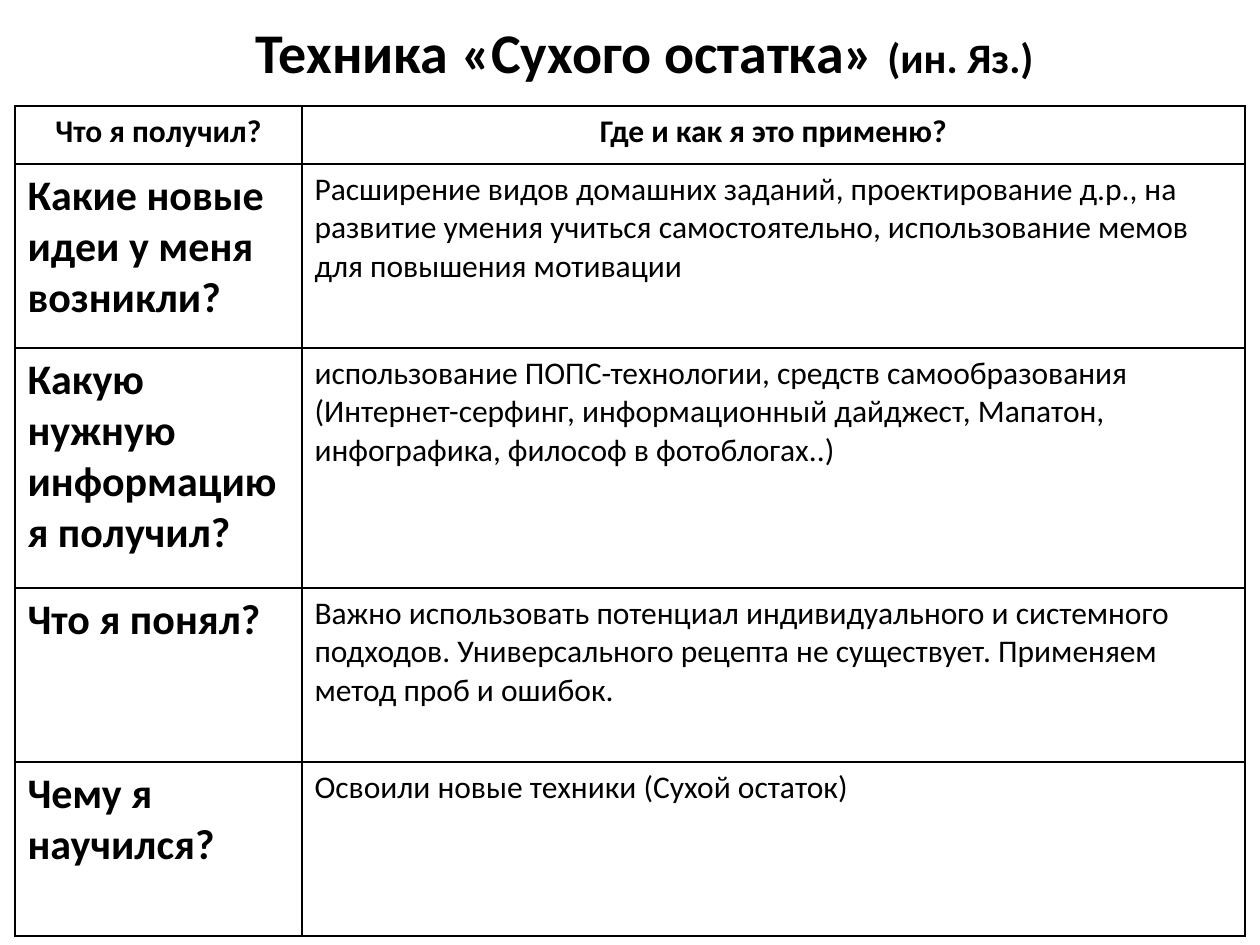
"""Build the "dry residue" reflection slide: a title above a two-column table."""
from lxml.etree import SubElement
from pptx import Presentation
from pptx.dml.color import RGBColor
from pptx.enum.text import MSO_ANCHOR, PP_ALIGN
from pptx.oxml.ns import qn
from pptx.util import Pt

TITLE = [("Техника «Сухого остатка» ", 32), ("(ин. Яз.)", 24)]
HEAD = ("Что я получил?", "Где и как я это применю?")
ROWS = [
    ("Какие новые идеи у меня возникли?",
     "Расширение видов домашних заданий, проектирование д.р., на развитие умения "
     "учиться самостоятельно, использование мемов для повышения мотивации"),
    ("Какую нужную информацию я получил?",
     "использование ПОПС-технологии, средств самообразования (Интернет-серфинг, "
     "информационный дайджест, Мапатон, инфографика, философ в фотоблогах..)"),
    ("Что я понял?",
     "Важно использовать потенциал индивидуального и системного подходов. "
     "Универсального рецепта не существует. Применяем метод проб и ошибок."),
    ("Чему я научился?", "Освоили новые техники (Сухой остаток)"),
]
COLORS = {"text": "000000", "line": "000000", "fill": "FFFFFF"}
FONT = "Calibri"
WIDTHS = (287, 943)
HEIGHTS = (58, 184, 240, 174, 174)
PX = 914400 // 126


def px(*nums):
    return [num * PX for num in nums]


def style(run, size, bold):
    font = run.font
    font.name, font.size, font.bold = FONT, Pt(size), bold
    font.color.rgb = RGBColor.from_string(COLORS["text"])


def border(cell):
    props = cell._tc.get_or_add_tcPr()
    for spot, side in enumerate(("lnL", "lnR", "lnT", "lnB")):
        line = SubElement(props, qn(f"a:{side}"), w=str(Pt(1)))
        fill = SubElement(line, qn("a:solidFill"))
        SubElement(fill, qn("a:srgbClr"), val=COLORS["line"])
        props.insert(spot, line)


def add_title(slide):
    frame = slide.shapes.add_textbox(*px(54, 16, 1181, 70)).text_frame
    frame.word_wrap = True
    frame.vertical_anchor = MSO_ANCHOR.MIDDLE
    para = frame.paragraphs[0]
    para.alignment = PP_ALIGN.CENTER
    for text, size in TITLE:
        run = para.add_run()
        run.text = text
        style(run, size, True)


def add_grid(slide):
    data = [HEAD, *ROWS]
    box = px(15, 106, sum(WIDTHS), sum(HEIGHTS))
    table = slide.shapes.add_table(len(data), len(HEAD), *box).table
    table.horz_banding = False
    for col, width in zip(table.columns, px(*WIDTHS)):
        col.width = width
    for row, height in zip(table.rows, px(*HEIGHTS)):
        row.height = height
    for r, texts in enumerate(data):
        for c, text in enumerate(texts):
            cell = table.cell(r, c)
            cell.fill.solid()
            cell.fill.fore_color.rgb = RGBColor.from_string(COLORS["fill"])
            border(cell)
            para = cell.text_frame.paragraphs[0]
            para.text = text
            para.alignment = PP_ALIGN.LEFT if r else PP_ALIGN.CENTER
            style(para.runs[0], 24 if r and not c else 18, not (r and c))


def main():
    deck = Presentation()
    deck.slide_width, deck.slide_height = px(1260, 945)
    slide = deck.slides.add_slide(deck.slide_layouts[6])
    add_title(slide)
    add_grid(slide)
    deck.save("out.pptx")


if __name__ == "__main__":
    main()
